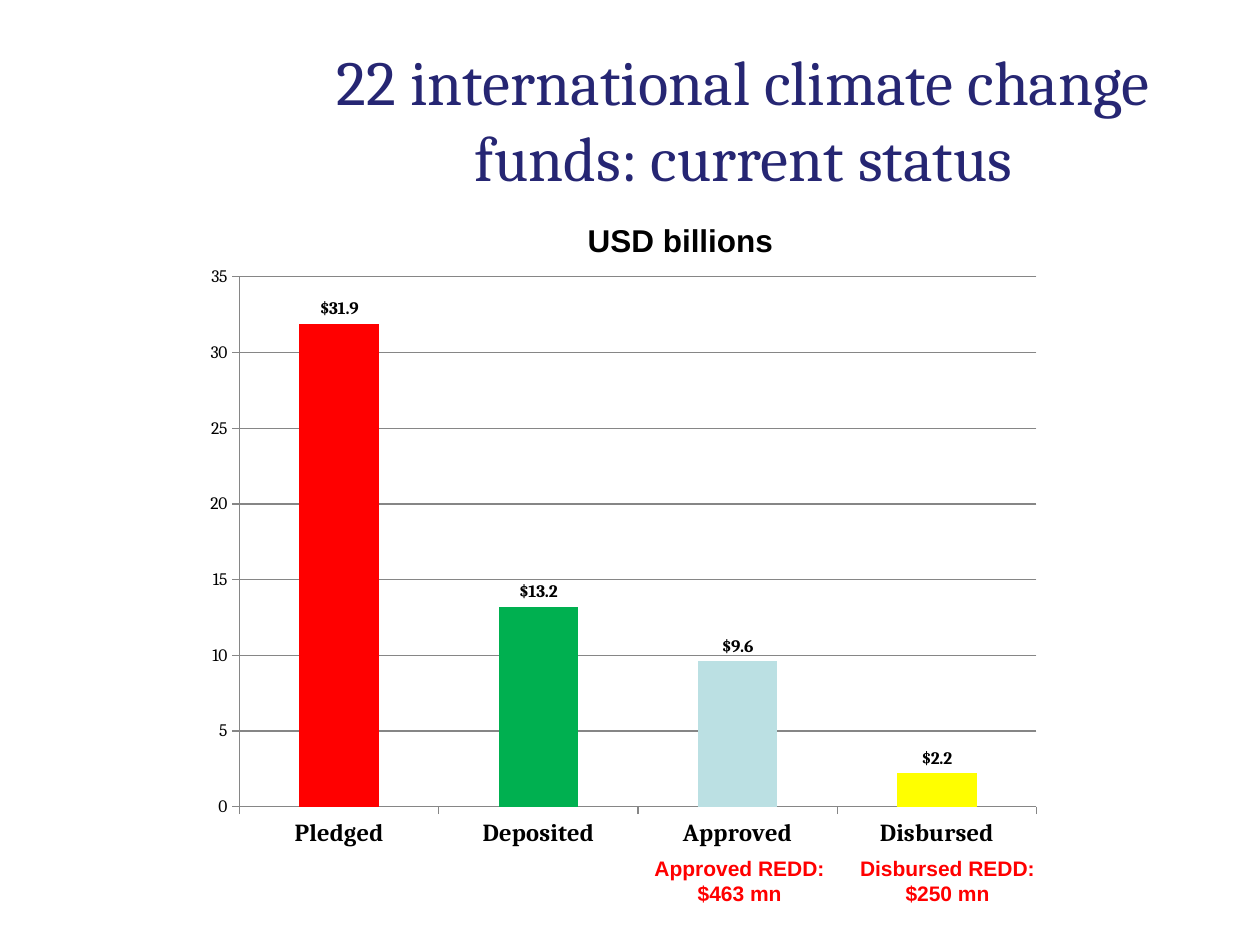
import dataclasses

import lxml.etree
import pptx
import pptx.chart.data
import pptx.dml.color
import pptx.enum.chart
import pptx.enum.text
import pptx.oxml
import pptx.oxml.ns
import pptx.util


@dataclasses.dataclass(frozen=True)
class Theme:
    """Colours, fonts and type sizes of the slide."""
    navy: str = "262673"
    black: str = "000000"
    red: str = "FF0000"
    green: str = "00B050"
    pale_blue: str = "BBE0E3"
    yellow: str = "FFFF00"
    grey: str = "868686"
    serif: str = "Cambria"
    sans: str = "Arial"
    title: int = 36
    heading: int = 18
    category: int = 14
    note: int = 12
    value: int = 10


class SlideBuilder:
    """Adds styled elements placed by shares of the slide's size."""

    def __init__(self, deck, theme):
        self.deck = deck
        self.theme = theme
        self.slide = deck.slides.add_slide(deck.slide_layouts[6])

    def place(self, left, top, width, height):
        """Turn shares of the slide into lengths."""
        across, down = self.deck.slide_width, self.deck.slide_height
        return [round(share * side) for share, side in
                zip((left, top, width, height), (across, down, across, down))]

    def style(self, font, size, colour, face, bold=False):
        """Apply one type style to a font."""
        font.size = pptx.util.Pt(size)
        font.name = face
        font.bold = bold
        font.color.rgb = pptx.dml.color.RGBColor.from_string(colour)

    def text(self, area, lines, size, colour, face, bold=False,
             anchor=pptx.enum.text.MSO_ANCHOR.TOP):
        """Add a centred text box with one paragraph per line."""
        frame = self.slide.shapes.add_textbox(*self.place(*area)).text_frame
        frame.word_wrap = True
        frame.vertical_anchor = anchor
        frame.text = "\n".join(lines)
        for paragraph in frame.paragraphs:
            paragraph.alignment = pptx.enum.text.PP_ALIGN.CENTER
            self.style(paragraph.font, size, colour, face, bold)

    def rule(self, line):
        """Give an axis or gridline its thin grey stroke."""
        line.color.rgb = pptx.dml.color.RGBColor.from_string(self.theme.grey)
        line.width = pptx.util.Pt(0.75)

    def columns(self, area, funds, plot):
        """Add a column chart with one colour per category."""
        theme = self.theme
        data = pptx.chart.data.CategoryChartData()
        data.categories = [stage for stage, _, _ in funds]
        data.add_series("Series 1", [amount for _, amount, _ in funds])
        chart = self.slide.shapes.add_chart(
            pptx.enum.chart.XL_CHART_TYPE.COLUMN_CLUSTERED,
            *self.place(*area), data).chart
        chart.has_legend = False
        chart.has_title = False
        self.style(chart.font, theme.value, theme.black, theme.serif)

        for axis in (chart.category_axis, chart.value_axis):
            axis.major_tick_mark = pptx.enum.chart.XL_TICK_MARK.OUTSIDE
            self.rule(axis.format.line)
        self.style(chart.category_axis.tick_labels.font, theme.category,
                   theme.black, theme.serif, True)
        amounts = chart.value_axis
        amounts.minimum_scale, amounts.maximum_scale = 0, 35
        amounts.major_unit = 5
        amounts.has_major_gridlines = True
        self.rule(amounts.major_gridlines.format.line)

        bars = chart.plots[0]
        bars.gap_width = 150
        bars.vary_by_categories = False
        bars.has_data_labels = True
        labels = bars.data_labels
        labels.show_value = True
        labels.number_format = "[$$-409]#,##0.0"
        labels.number_format_is_linked = False
        labels.position = pptx.enum.chart.XL_LABEL_POSITION.OUTSIDE_END
        self.style(labels.font, theme.value, theme.black, theme.serif, True)
        series = bars.series[0]
        fills = [series.format.fill]
        fills += [series.points[index].format.fill for index in range(len(funds))]
        colours = [theme.pale_blue] + [colour for _, _, colour in funds]
        for fill, colour in zip(fills, colours):
            fill.solid()
            fill.fore_color.rgb = pptx.dml.color.RGBColor.from_string(colour)
        self.fix_plot(chart, plot)

    def fix_plot(self, chart, plot):
        """Pin the inner plot area to shares of the chart."""
        qn = pptx.oxml.ns.qn
        area = chart._chartSpace.chart.plotArea
        for old in area.findall(qn("c:layout")):
            area.remove(old)
        layout = lxml.etree.Element(qn("c:layout"))
        manual = lxml.etree.SubElement(layout, qn("c:manualLayout"))
        settings = [("layoutTarget", "inner"), ("xMode", "edge"), ("yMode", "edge")]
        for tag, setting in settings + list(zip("xywh", plot)):
            lxml.etree.SubElement(manual, qn("c:" + tag)).set("val", str(setting))
        area.insert(0, layout)


def main():
    """Build and save the fund status slide."""
    theme = Theme()
    deck = pptx.Presentation()
    deck.slide_width = pptx.util.Inches(10)
    deck.slide_height = pptx.util.Inches(7.5)
    builder = SlideBuilder(deck, theme)

    builder.text((0.24, 0.04, 0.7, 0.17),
                 ["22 international climate change funds: current status"],
                 theme.title, theme.navy, theme.serif,
                 anchor=pptx.enum.text.MSO_ANCHOR.MIDDLE)
    funds = [("Pledged", 31.9, theme.red), ("Deposited", 13.2, theme.green),
             ("Approved", 9.6, theme.pale_blue), ("Disbursed", 2.2, theme.yellow)]
    builder.columns((0.154, 0.27, 0.683, 0.64), funds, (0.053, 0.036, 0.926, 0.876))
    builder.text((0.406, 0.227, 0.268, 0.053), ["USD billions"],
                 theme.heading, theme.black, theme.sans, True)
    notes = [("Approved REDD:", "$463 mn"), ("Disbursed REDD:", "$250 mn")]
    for column, lines in enumerate(notes):
        builder.text((0.453 + 0.165 * column, 0.899, 0.268, 0.067), lines,
                     theme.note, theme.red, theme.sans, True)
    deck.save("out.pptx")


if __name__ == "__main__":
    main()
